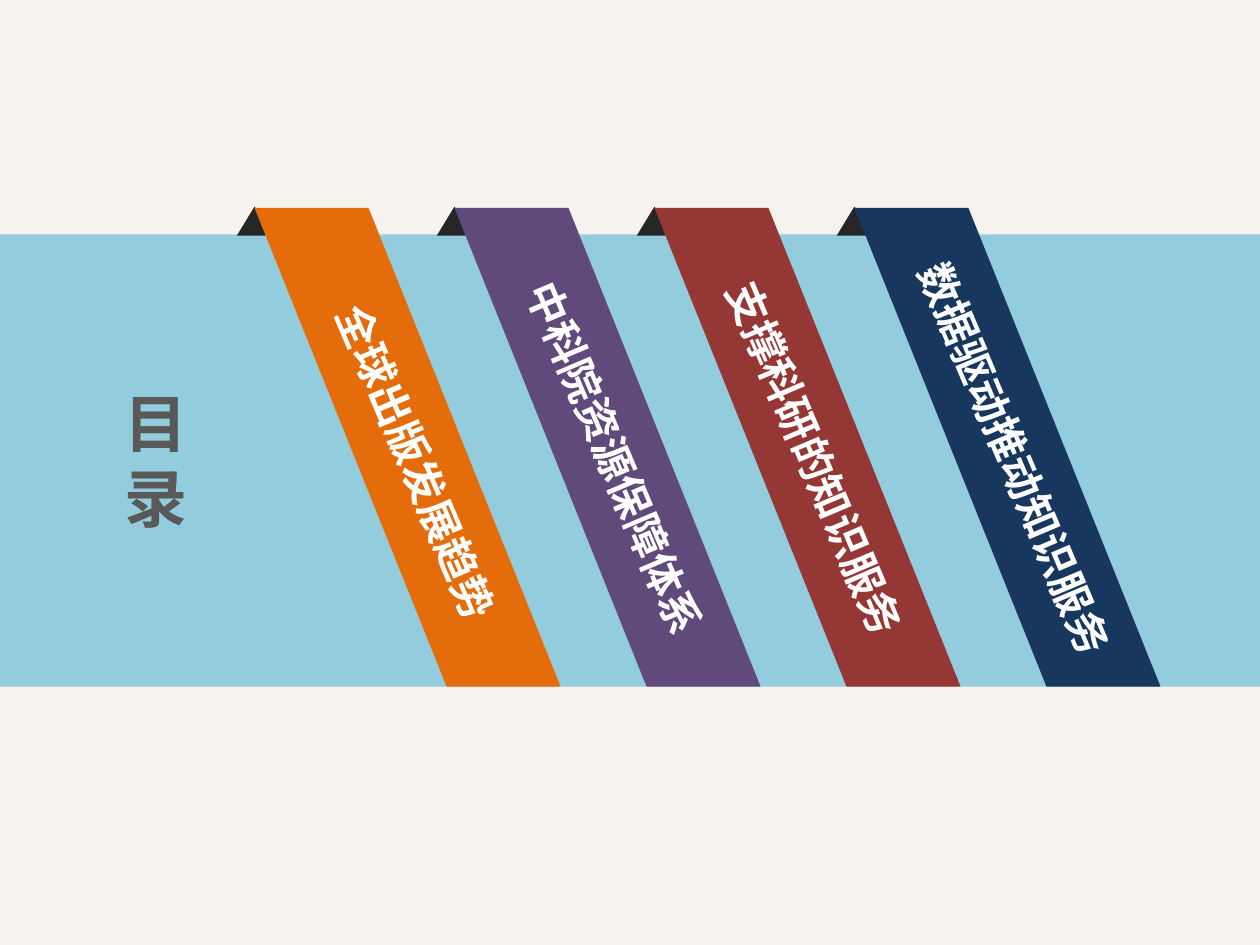
"""Build a contents slide with four slanted ribbons hanging over a band."""
import dataclasses
import typing

import pptx
import pptx.dml.color
import pptx.enum.shapes
import pptx.enum.text
import pptx.oxml
import pptx.oxml.ns
import pptx.util

RGBColor = pptx.dml.color.RGBColor
PAPER = RGBColor(0xF6, 0xF3, 0xEE)
BAND = RGBColor(0x93, 0xCD, 0xDD)
FOLD = RGBColor(0x26, 0x26, 0x26)
HEADING = RGBColor(0x59, 0x59, 0x59)
WHITE = RGBColor(0xFF, 0xFF, 0xFF)
ORANGE = RGBColor(0xE4, 0x6C, 0x0A)
PURPLE = RGBColor(0x60, 0x4A, 0x7B)
RED = RGBColor(0x95, 0x37, 0x35)
NAVY = RGBColor(0x17, 0x37, 0x5E)

FONT = "Noto Sans CJK SC"
COLUMNS, ROWS = 100, 75
CELL = pptx.util.Inches(0.1)

BAND_TOP, BAND_BOTTOM = 18.6, 54.5
RIBBON_LEFT, RIBBON_TOP, RIBBON_PITCH = 20.2, 16.5, 15.87
RIBBON_WIDTH, RIBBON_SLANT = 9.05, 15.25
FOLD_TOP, FOLD_BOTTOM = 16.4, 18.7
LABEL_MIDDLE_X, LABEL_MIDDLE_Y, LABEL_HEIGHT = 12.85, 36.6, 5
LABEL_SIZE, LABEL_ANGLE, LABEL_PADDING = 24, 67, 2.5
SPACE_EM = 0.25

Point = tuple[float, float]


@dataclasses.dataclass(frozen=True)
class Chapter:
    """A chapter title and the colour of its ribbon."""

    title: str
    color: RGBColor


CHAPTERS = (
    Chapter(" 全球出版发展趋势", ORANGE),
    Chapter("中科院资源保障体系", PURPLE),
    Chapter("支撑科研的知识服务", RED),
    Chapter("数据驱动推动知识服务", NAVY),
)


def grid(cells: float) -> int:
    """Convert a number of grid cells to a slide length."""
    return round(cells * CELL)


def label_width(title: str) -> float:
    """Return the cells that a title needs on one line."""
    em = pptx.util.Pt(LABEL_SIZE) / CELL
    ems = sum(SPACE_EM if letter == " " else 1 for letter in title)
    return ems * em + LABEL_PADDING


def paint(shape: typing.Any, color: RGBColor) -> None:
    """Give a shape a flat fill without line or shadow."""
    shape.shadow.inherit = False
    shape.fill.solid()
    shape.fill.fore_color.rgb = color
    shape.line.fill.background()


def draw_outline(shapes: typing.Any, points: list[Point], color: RGBColor) -> None:
    """Draw a closed, filled polygon through grid points."""
    start, *others = [(grid(x), grid(y)) for x, y in points]
    builder = shapes.build_freeform(*start, scale=1.0)
    builder.add_line_segments(others, close=True)
    paint(builder.convert_to_shape(), color)


def draw_text(shapes: typing.Any, text: str, *, left: float, top: float,
              width: float, height: float, size: float, color: RGBColor,
              wrap: bool = True, angle: float = 0) -> None:
    """Place bold text in a box given in grid cells."""
    box = shapes.add_textbox(grid(left), grid(top), grid(width), grid(height))
    box.rotation = angle
    frame = box.text_frame
    frame.word_wrap = wrap
    frame.auto_size = pptx.enum.text.MSO_AUTO_SIZE.SHAPE_TO_FIT_TEXT
    run = frame.paragraphs[0].add_run()
    run.text = text
    run.font.name = FONT
    run.font.size = pptx.util.Pt(size)
    run.font.bold = True
    run.font.color.rgb = color
    east_asian = pptx.oxml.parse_xml(
        f'<a:ea {pptx.oxml.ns.nsdecls("a")} typeface="{FONT}"/>')
    run.font._element.find(pptx.oxml.ns.qn("a:latin")).addnext(east_asian)


def draw_ribbon(shapes: typing.Any, chapter: Chapter, left: float) -> None:
    """Draw one chapter as a group of fold, ribbon and label."""
    parts = shapes.add_group_shape().shapes
    draw_outline(parts, [(left, FOLD_TOP), (left - 1.4, FOLD_BOTTOM),
                         (left + 1.8, FOLD_BOTTOM)], FOLD)
    foot = left + RIBBON_SLANT
    draw_outline(parts, [(left, RIBBON_TOP), (foot, BAND_BOTTOM),
                         (foot + RIBBON_WIDTH, BAND_BOTTOM),
                         (left + RIBBON_WIDTH, RIBBON_TOP)], chapter.color)
    width = label_width(chapter.title)
    draw_text(parts, chapter.title, left=left + LABEL_MIDDLE_X - width / 2,
              top=LABEL_MIDDLE_Y - LABEL_HEIGHT / 2, width=width,
              height=LABEL_HEIGHT, size=LABEL_SIZE, color=WHITE, wrap=False,
              angle=LABEL_ANGLE)


def main() -> None:
    """Build and save the slide."""
    deck = pptx.Presentation()
    deck.slide_width, deck.slide_height = grid(COLUMNS), grid(ROWS)
    slide = deck.slides.add_slide(deck.slide_layouts[6])
    slide.background.fill.solid()
    slide.background.fill.fore_color.rgb = PAPER
    band = slide.shapes.add_shape(
        pptx.enum.shapes.MSO_SHAPE.RECTANGLE, 0, grid(BAND_TOP),
        grid(COLUMNS), grid(BAND_BOTTOM - BAND_TOP))
    paint(band, BAND)
    draw_text(slide.shapes, "目录", left=8.9, top=30, width=6.4, height=13.1,
              size=36, color=HEADING)
    for index, chapter in enumerate(CHAPTERS):
        draw_ribbon(slide.shapes, chapter, RIBBON_LEFT + index * RIBBON_PITCH)
    deck.save("out.pptx")


if __name__ == "__main__":
    main()
